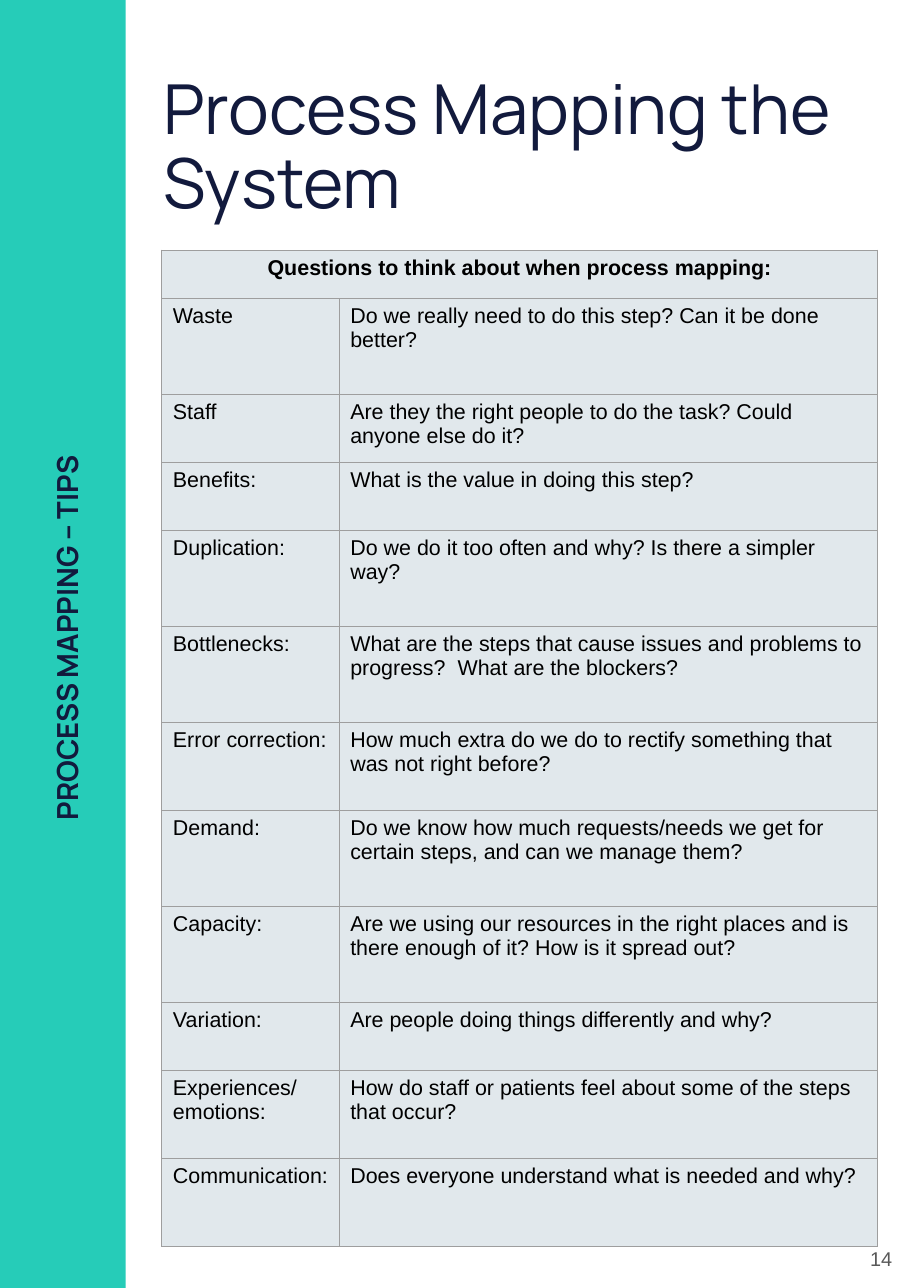
"""Build the process mapping tips page with its table of questions."""
from lxml.etree import SubElement
from pptx import Presentation
from pptx.dml.color import RGBColor
from pptx.enum.shapes import MSO_SHAPE
from pptx.enum.text import MSO_ANCHOR, MSO_AUTO_SIZE, PP_ALIGN
from pptx.oxml.ns import qn
from pptx.util import Inches, Pt

TEAL = RGBColor(0x26, 0xCC, 0xB8)
NAVY = RGBColor(0x12, 0x1A, 0x3D)
PALE = RGBColor(0xE1, 0xE8, 0xEC)
RULE = RGBColor(0x9E, 0x9E, 0x9E)
BLACK = RGBColor(0, 0, 0)
GREY = RGBColor(0x59, 0x59, 0x59)

TITLE = "Process Mapping the System"
SIDE_LABEL = "PROCESS MAPPING – TIPS"
PAGE_NUMBER = "14"
HEADING = "Questions to think about when process mapping:"

SHORT, MEDIUM, TALL = 0.62, 0.8, 0.87
HEADING_HEIGHT = 0.44
QUESTIONS = [
    ("Waste", "Do we really need to do this step? Can it be done better?", TALL),
    ("Staff", "Are they the right people to do the task? Could anyone else do it?", SHORT),
    ("Benefits:", "What is the value in doing this step?", SHORT),
    ("Duplication:", "Do we do it too often and why? Is there a simpler way?", TALL),
    ("Bottlenecks:", "What are the steps that cause issues and problems to progress?  "
     "What are the blockers?", TALL),
    ("Error correction:", "How much extra do we do to rectify something that was not "
     "right before?", MEDIUM),
    ("Demand:", "Do we know how much requests/needs we get for certain steps, and can "
     "we manage them?", TALL),
    ("Capacity:", "Are we using our resources in the right places and is there enough "
     "of it? How is it spread out?", TALL),
    ("Variation:", "Are people doing things differently and why?", SHORT),
    ("Experiences/\nemotions:", "How do staff or patients feel about some of the steps "
     "that occur?", MEDIUM),
    ("Communication:", "Does everyone understand what is needed and why?", MEDIUM),
]

WIDTH, HEIGHT = 8.27, 11.69
BAND_WIDTH = 1.14
TABLE_LEFT, TABLE_TOP = 1.47, 2.27
COLUMNS = (1.61, 4.89)


def write(frame, text, font, size, color, bold=False, align=PP_ALIGN.LEFT):
    """Fill a text frame and format every run in it."""
    frame.text = text
    frame.word_wrap = True
    for para in frame.paragraphs:
        para.alignment = align
        for span in para.runs:
            span.font.name = font
            span.font.size = Pt(size)
            span.font.bold = bold
            span.font.color.rgb = color


def place(box, left, top, width, height):
    """Move and size a shape in inches."""
    box.left, box.top = Inches(left), Inches(top)
    box.width, box.height = Inches(width), Inches(height)


def set_margins(frame, margin):
    """Give a text frame the same margin on all sides."""
    frame.margin_left = frame.margin_right = Inches(margin)
    frame.margin_top = frame.margin_bottom = Inches(margin)


def style_cell(cell, text, bold=False, align=PP_ALIGN.LEFT):
    """Write a cell and give it borders and a fill."""
    write(cell.text_frame, text, "Arial", 14, BLACK, bold, align)
    properties = cell._tc.get_or_add_tcPr()
    for side in ("a:lnL", "a:lnR", "a:lnT", "a:lnB"):
        line = SubElement(properties, qn(side), w=str(Pt(0.75)))
        SubElement(SubElement(line, qn("a:solidFill")), qn("a:srgbClr"), val=str(RULE))
    cell.fill.solid()
    cell.fill.fore_color.rgb = PALE


def add_questions(page):
    """Add the table with a merged heading row."""
    heights = [HEADING_HEIGHT] + [height for _, _, height in QUESTIONS]
    table = page.shapes.add_table(
        len(heights), len(COLUMNS), Inches(TABLE_LEFT), Inches(TABLE_TOP),
        Inches(sum(COLUMNS)), Inches(sum(heights))).table
    for column, width in zip(table.columns, COLUMNS):
        column.width = Inches(width)
    for row, height in zip(table.rows, heights):
        row.height = Inches(height)
    table.cell(0, 0).merge(table.cell(0, 1))
    style_cell(table.cell(0, 0), HEADING, True, PP_ALIGN.CENTER)
    style_cell(table.cell(0, 1), "")
    for row, (topic, question, _) in enumerate(QUESTIONS, start=1):
        style_cell(table.cell(row, 0), topic)
        style_cell(table.cell(row, 1), question)


def main():
    """Compose and save the page."""
    deck = Presentation()
    deck.slide_width, deck.slide_height = Inches(WIDTH), Inches(HEIGHT)
    page = deck.slides.add_slide(deck.slide_layouts[5])

    band = page.shapes.add_shape(
        MSO_SHAPE.RECTANGLE, 0, 0, Inches(BAND_WIDTH), Inches(HEIGHT))
    band.shadow.inherit = False
    band.fill.solid()
    band.fill.fore_color.rgb = TEAL
    band.line.fill.background()

    title = page.shapes.title
    place(title, 1.38, 0.58, 6.75, 1.72)
    write(title.text_frame, TITLE, "Manrope", 45, NAVY)
    set_margins(title.text_frame, 0.1)
    title.text_frame.auto_size = MSO_AUTO_SIZE.NONE
    title.text_frame.vertical_anchor = MSO_ANCHOR.TOP
    title.text_frame.paragraphs[0].line_spacing = 0.9

    label = page.shapes.add_textbox(0, 0, 0, 0)
    place(label, -4.61, 5.53, 10.43, 0.52)
    label.rotation = 270
    write(label.text_frame, SIDE_LABEL, "Manrope", 19, NAVY, True, PP_ALIGN.CENTER)
    set_margins(label.text_frame, 0.1)

    add_questions(page)

    number = page.shapes.add_textbox(0, 0, 0, 0)
    place(number, 7.73, 10.98, 0.5, 0.89)
    write(number.text_frame, PAGE_NUMBER, "Arial", 13, GREY, align=PP_ALIGN.RIGHT)
    set_margins(number.text_frame, 0.13)
    number.text_frame.vertical_anchor = MSO_ANCHOR.MIDDLE

    deck.save("out.pptx")


if __name__ == "__main__":
    main()
